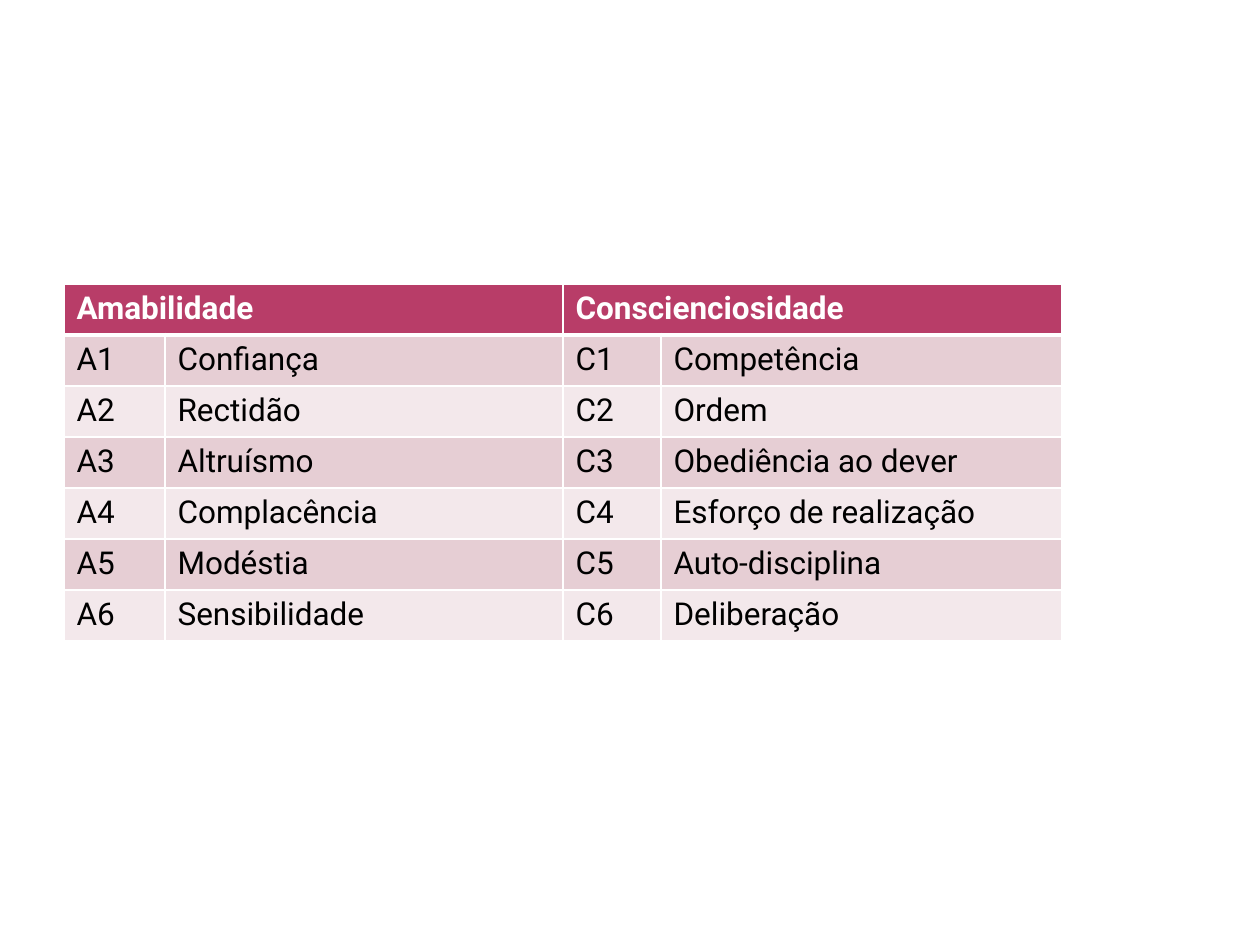
from dataclasses import dataclass

from lxml.etree import SubElement
from pptx import Presentation
from pptx.dml.color import RGBColor as Rgb
from pptx.oxml.ns import qn
from pptx.util import Emu, Pt


@dataclass(frozen=True)
class Theme:
    """Colours, font and sizes of the facet table."""
    header: str = "B83D68"
    bands: tuple = ("E6CED4", "F3E8EB")
    header_text: str = "FFFFFF"
    body_text: str = "000000"
    rule: str = "FFFFFF"
    font: str = "Roboto"
    text_pt: int = 18
    rule_pt: int = 1
    header_rule_pt: int = 3


THEME = Theme()
PX_PER_INCH = 126
SLIDE_SIZE = (1260, 945)
TABLE_ORIGIN = (64, 284)
COLUMN_WIDTHS = (101, 398, 98, 401)
ROW_HEIGHT = 51

FACETS = {
    "Amabilidade": ("A", ("Confiança", "Rectidão", "Altruísmo",
                          "Complacência", "Modéstia", "Sensibilidade")),
    "Conscienciosidade": ("C", ("Competência", "Ordem", "Obediência ao dever",
                                "Esforço de realização", "Auto-disciplina",
                                "Deliberação")),
}


def px(length):
    """Turn whole pixels into EMU."""
    return Emu(round(length * 914400 / PX_PER_INCH))


def rule_cell(cell, top_pt, bottom_pt):
    """Draw the four rules around a cell."""
    properties = cell._tc.get_or_add_tcPr()
    widths = {"L": THEME.rule_pt, "R": THEME.rule_pt, "T": top_pt, "B": bottom_pt}
    for side, width in widths.items():
        rule = SubElement(properties, qn(f"a:ln{side}"), w=str(Pt(width)))
        paint = SubElement(rule, qn("a:solidFill"))
        SubElement(paint, qn("a:srgbClr"), val=THEME.rule)


def fill_cell(cell, fill):
    """Give a cell a solid background."""
    cell.fill.solid()
    cell.fill.fore_color.rgb = Rgb.from_string(fill)


def write_cell(cell, wording, color, bold=False):
    """Write one run of text into a cell."""
    run = cell.text_frame.paragraphs[0].add_run()
    run.text = wording
    run.font.name = THEME.font
    run.font.size = Pt(THEME.text_pt)
    run.font.bold = bold
    run.font.color.rgb = Rgb.from_string(color)


def style_row(table, row, fill):
    """Rule and fill every cell of a row."""
    top = THEME.header_rule_pt if row == 1 else THEME.rule_pt
    bottom = THEME.header_rule_pt if row == 0 else THEME.rule_pt
    for column in range(len(COLUMN_WIDTHS)):
        cell = table.cell(row, column)
        rule_cell(cell, top, bottom)
        fill_cell(cell, fill)


def add_domain(table, column, domain, letter, facets):
    """Write a domain heading with its numbered facets below."""
    heading = table.cell(0, column)
    heading.merge(table.cell(0, column + 1))
    write_cell(heading, domain, THEME.header_text, bold=True)
    for number, facet in enumerate(facets, start=1):
        write_cell(table.cell(number, column), f"{letter}{number}", THEME.body_text)
        write_cell(table.cell(number, column + 1), facet, THEME.body_text)


def add_facet_table(slide):
    """Add the table of personality domains and facets."""
    row_count = 1 + max(len(facets) for _, facets in FACETS.values())
    size = (sum(COLUMN_WIDTHS), row_count * ROW_HEIGHT)
    table = slide.shapes.add_table(row_count, len(COLUMN_WIDTHS),
                                   *map(px, TABLE_ORIGIN + size)).table
    for column, width in zip(table.columns, COLUMN_WIDTHS):
        column.width = px(width)
    for row in range(row_count):
        table.rows[row].height = px(ROW_HEIGHT)
        fill = THEME.bands[(row - 1) % 2] if row else THEME.header
        style_row(table, row, fill)
    for position, (domain, (letter, facets)) in enumerate(FACETS.items()):
        add_domain(table, 2 * position, domain, letter, facets)


def main():
    """Build and save the slide."""
    deck = Presentation()
    deck.slide_width, deck.slide_height = map(px, SLIDE_SIZE)
    add_facet_table(deck.slides.add_slide(deck.slide_layouts[6]))
    deck.save("out.pptx")


if __name__ == "__main__":
    main()
